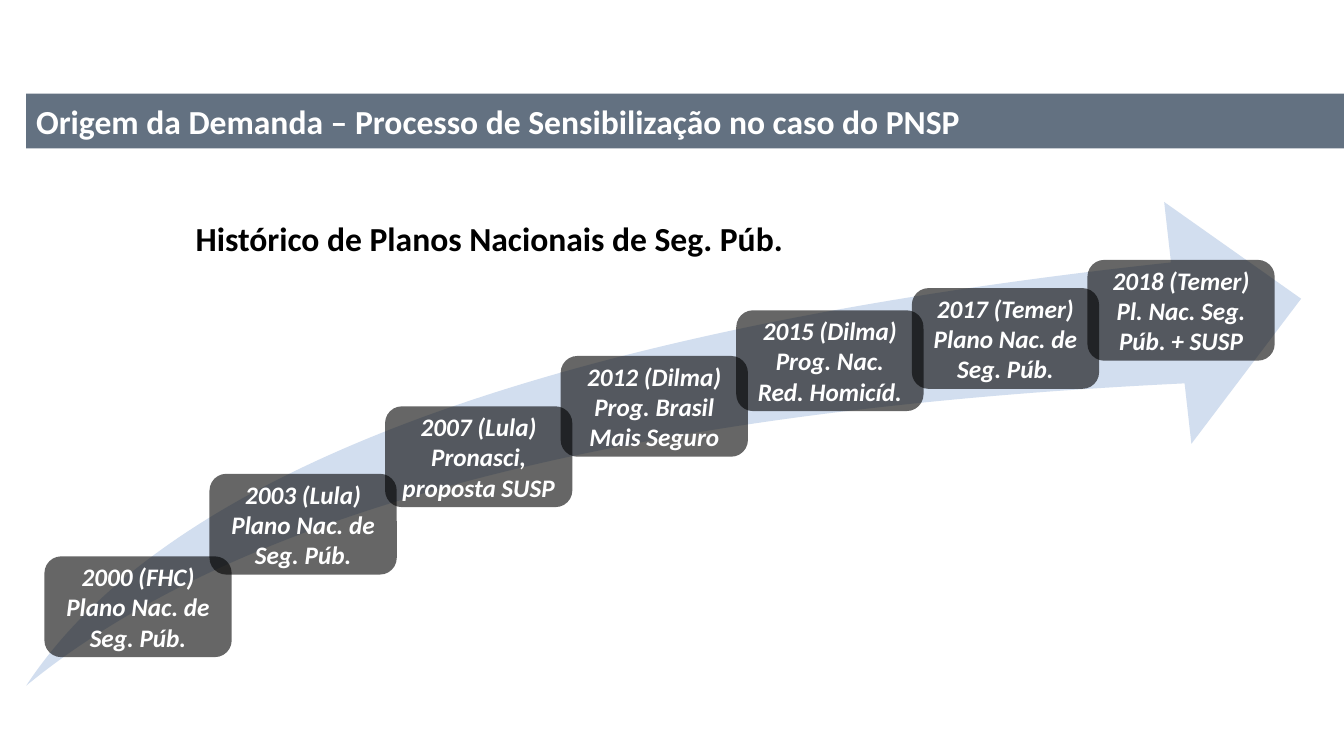
from lxml import etree
from pptx import Presentation
from pptx.dml.color import RGBColor
from pptx.enum.shapes import MSO_SHAPE
from pptx.enum.text import MSO_ANCHOR, PP_ALIGN
from pptx.oxml.ns import qn
from pptx.util import Cm, Pt

RECTANGLE = MSO_SHAPE.RECTANGLE
ROUNDED = MSO_SHAPE.ROUNDED_RECTANGLE
SWOOSH = MSO_SHAPE.SWOOSH_ARROW
MIDDLE = MSO_ANCHOR.MIDDLE
LEFT, CENTER = PP_ALIGN.LEFT, PP_ALIGN.CENTER

TITLE = "Origem da Demanda – Processo de Sensibilização no caso do PNSP"
SUBTITLE = "Histórico de Planos Nacionais de Seg. Púb."
# Heading, plan (a newline forces a line break), top in cm
PLANS = [
    ("2000 (FHC)", "Plano Nac. de Seg. Púb.", 14.02),
    ("2003 (Lula)", "Plano Nac. de Seg. Púb.", 11.94),
    ("2007 (Lula)", "Pronasci, proposta SUSP", 10.24),
    ("2012 (Dilma)", "Prog. Brasil Mais Seguro", 8.97),
    ("2015 (Dilma)", "Prog. Nac.\nRed. Homicíd.", 7.82),
    ("2017 (Temer)", "Plano Nac. de Seg. Púb.", 7.26),
    ("2018 (Temer)", "Pl. Nac. Seg. Púb. + SUSP", 6.55),
]
FIRST_LEFT, SECOND_LEFT, STEP = 1.12, 5.28, 4.425
CARD_WIDTH, CARD_HEIGHT = 4.72, 2.54

THEME = {
    "font": "Calibri",
    "heading_size": 24,
    "card_size": 18,
    "bar": RGBColor(0x63, 0x71, 0x81),
    "arrow": RGBColor(0xD2, 0xDE, 0xEF),
    "card": RGBColor(0, 0, 0),
    "card_opacity": 60,
    "light": RGBColor(0xFF, 0xFF, 0xFF),
    "dark": RGBColor(0, 0, 0),
}


def add_filled(shapes, kind, box, color):
    shape = shapes.add_shape(kind, *(Cm(length) for length in box))
    shape.shadow.inherit = False
    shape.fill.solid()
    shape.fill.fore_color.rgb = color
    shape.line.fill.background()
    return shape


def set_opacity(shape, percent):
    color = shape.fill._xPr.find(qn("a:solidFill"))[0]
    etree.SubElement(color, qn("a:alpha")).set("val", str(percent * 1000))


def write(shape, texts, size, color, align, italic=False):
    frame = shape.text_frame
    frame.word_wrap = True
    for index, text in enumerate(texts):
        paragraph = frame.add_paragraph() if index else frame.paragraphs[0]
        paragraph.alignment = align
        for number, line in enumerate(text.split("\n")):
            if number:
                paragraph.add_line_break()
            run = paragraph.add_run()
            run.text = line
            font = run.font
            font.name, font.size = THEME["font"], Pt(size)
            font.bold, font.italic = True, italic
            font.color.rgb = color


def main():
    presentation = Presentation()
    presentation.slide_width, presentation.slide_height = Cm(33.87), Cm(19.05)
    slide = presentation.slides.add_slide(presentation.slide_layouts[6])

    bar = add_filled(slide.shapes, RECTANGLE, (0.66, 2.36, 33.21, 1.38), THEME["bar"])
    bar.text_frame.vertical_anchor = MIDDLE
    write(bar, [TITLE], THEME["heading_size"], THEME["light"], LEFT)

    timeline = slide.shapes.add_group_shape().shapes
    arrow = add_filled(timeline, SWOOSH, (0.66, 5.09, 32.13, 12.19), THEME["arrow"])
    arrow.adjustments[0], arrow.adjustments[1] = 0.25, 0.269

    for index, (heading, plan, top) in enumerate(PLANS):
        left = SECOND_LEFT + (index - 1) * STEP if index else FIRST_LEFT
        card = add_filled(timeline, ROUNDED, (left, top, CARD_WIDTH, CARD_HEIGHT), THEME["card"])
        set_opacity(card, THEME["card_opacity"])
        card.text_frame.vertical_anchor = MIDDLE
        write(card, [heading, plan], THEME["card_size"], THEME["light"], CENTER, italic=True)

    subtitle = timeline.add_textbox(Cm(3.76), Cm(5.36), Cm(17.15), Cm(1.28))
    write(subtitle, [SUBTITLE], THEME["heading_size"], THEME["dark"], CENTER)

    presentation.save("out.pptx")


if __name__ == "__main__":
    main()
